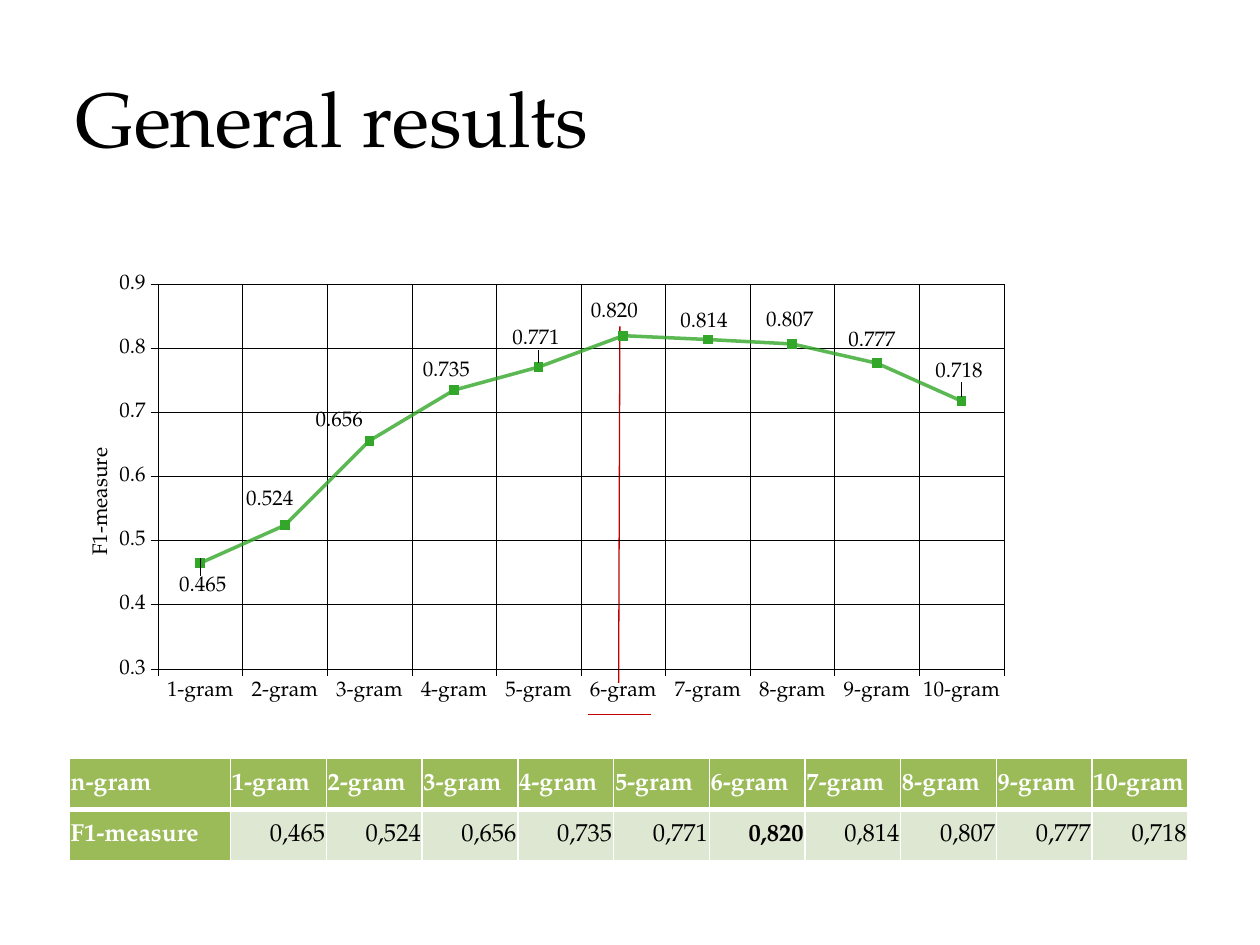
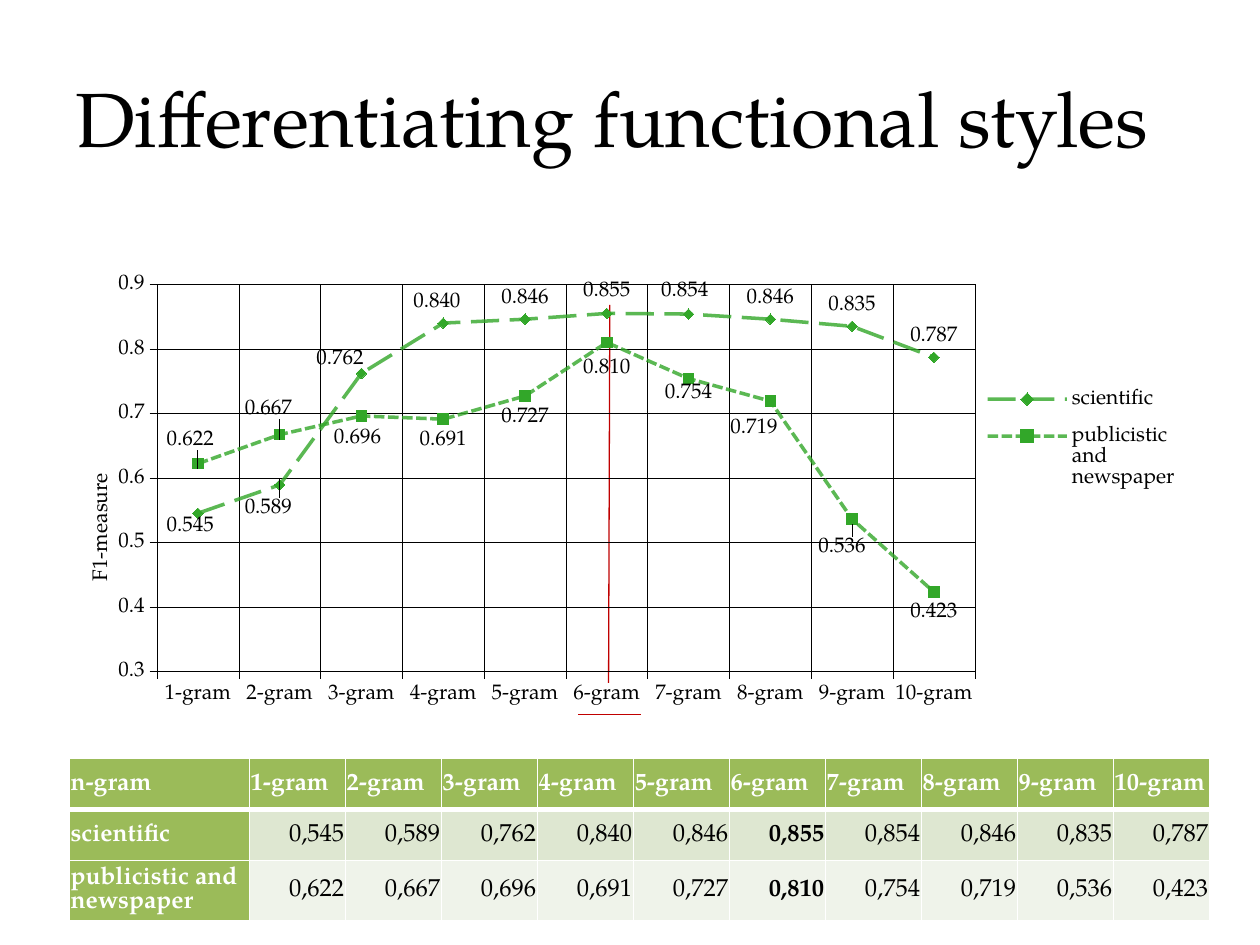
from lxml.etree import SubElement
from pptx import Presentation
from pptx.chart.data import CategoryChartData as ChartData
from pptx.dml.color import RGBColor
from pptx.enum.chart import XL_CHART_TYPE as Kind
from pptx.enum.chart import XL_LABEL_POSITION as Pos
from pptx.enum.chart import XL_LEGEND_POSITION as LegendPos
from pptx.enum.chart import XL_MARKER_STYLE as Mark
from pptx.enum.chart import XL_TICK_MARK as Tick
from pptx.enum.dml import MSO_LINE as Dash
from pptx.enum.shapes import MSO_CONNECTOR as Link
from pptx.enum.text import MSO_ANCHOR as Anchor
from pptx.enum.text import PP_ALIGN as Align
from pptx.oxml.ns import qn
from pptx.util import Inches, Pt

FONT = "TeX Gyre Pagella"
BLACK = RGBColor(0, 0, 0)
WHITE = RGBColor(255, 255, 255)
RED = RGBColor(0xC0, 0, 0)
GREEN = RGBColor(0x32, 0xA7, 0x29)
HEAD = RGBColor(0x9B, 0xBB, 0x59)
BANDS = [RGBColor(0xDE, 0xE7, 0xD1), RGBColor(0xEF, 0xF3, 0xEA)]

GRAMS = [f"{n}-gram" for n in range(1, 11)]
BEST = 6
CHART_W, CHART_H = 8.88, 4.03

OVERALL = [0.465, 0.524, 0.656, 0.735, 0.771, 0.82, 0.814, 0.807, 0.777, 0.718]
SCIENCE = [0.545, 0.589, 0.762, 0.84, 0.846, 0.855, 0.854, 0.846, 0.835, 0.787]
PRESS = [0.622, 0.667, 0.696, 0.691, 0.727, 0.81, 0.754, 0.719, 0.536, 0.423]

# Label shifts in inches from the usual place, by point
OVERALL_MOVES = {
    0: (0.02, 0.34), 1: (-0.12, -0.04), 2: (-0.24, 0), 3: (-0.06, 0.01),
    4: (-0.02, -0.06), 5: (-0.07, -0.03), 6: (-0.03, 0.02),
    7: (-0.02, -0.02), 8: (-0.04, -0.02), 9: (-0.02, -0.07)}
SCIENCE_MOVES = {
    0: (-0.06, 0.27), 1: (-0.09, 0.35), 2: (-0.17, 0.05),
    3: (-0.05, 0), 5: (0, -0.01), 6: (-0.03, -0.02)}
PRESS_MOVES = {
    0: (-0.06, -0.35), 1: (-0.09, -0.37), 2: (-0.03, 0.01), 5: (0, 0.04),
    6: (0, -0.05), 7: (-0.13, 0.05), 8: (-0.08, 0.06)}


def style(para, size, color=BLACK, bold=False):
    for run in para.runs:
        font = run.font
        font.name, font.size, font.bold = FONT, Pt(size), bold
        font.color.rgb = color


def add_title(slide, text):
    box = slide.shapes.add_textbox(Inches(0.5), Inches(0.3), Inches(9), Inches(1.25))
    frame = box.text_frame
    frame.word_wrap = True
    frame.vertical_anchor = Anchor.MIDDLE
    frame.text = text
    style(frame.paragraphs[0], 44)


def add_line(slide, x1, y1, x2, y2):
    ends = [Inches(v) for v in (x1, y1, x2, y2)]
    line = slide.shapes.add_connector(Link.STRAIGHT, *ends)
    line.line.color.rgb = RED
    line.line.width = Pt(0.75)
    SubElement(line.element.spPr, qn("a:effectLst"))


def mark_best(slide, x, top):
    """Draw a line down to the best n-gram and underline its name."""
    add_line(slide, x, top, x - 0.01, 5.42)
    add_line(slide, x - 0.25, 5.67, x + 0.25, 5.67)


def place(parent, index, edge=True, inner=False, **spots):
    """Give a chart part a manual layout, in fractions of the chart."""
    for old in parent.findall(qn("c:layout")):
        parent.remove(old)
    layout = SubElement(parent, qn("c:layout"))
    parent.insert(index, layout)
    manual = SubElement(layout, qn("c:manualLayout"))
    if inner:
        SubElement(manual, qn("c:layoutTarget"), val="inner")
    if edge:
        for mode in ("xMode", "yMode"):
            SubElement(manual, qn(f"c:{mode}"), val="edge")
    for name, value in spots.items():
        SubElement(manual, qn(f"c:{name}"), val=f"{value:.4f}")


def clear_back(chart):
    space = chart.element
    props = SubElement(space, qn("c:spPr"))
    SubElement(props, qn("a:noFill"))
    SubElement(SubElement(props, qn("a:ln")), qn("a:noFill"))
    space.find(qn("c:chart")).addnext(props)


def style_axis(axis):
    axis.has_major_gridlines = True
    axis.major_tick_mark = Tick.CROSS
    for part in (axis, axis.major_gridlines):
        part.format.line.color.rgb = BLACK
        part.format.line.width = Pt(0.25)


def style_values(axis, title_y):
    axis.minimum_scale, axis.maximum_scale, axis.major_unit = 0.3, 0.9, 0.1
    axis.tick_labels.number_format = "0.0"
    axis.tick_labels.number_format_is_linked = False
    axis.has_title = True
    title = axis.axis_title
    title.text_frame.text = "F1-measure"
    style(title.text_frame.paragraphs[0], 12)
    body = title.element.xpath(".//a:bodyPr")[0]
    body.set("rot", "-5400000")
    body.set("vert", "horz")
    place(title.element, 1, x=0.02, y=title_y)


def style_series(series, dash, mark, size, pos, moves):
    series.smooth = False
    line = series.format.line
    line.color.rgb, line.width, line.dash_style = GREEN, Pt(2), dash
    color = series.format.line.color and series._element.xpath("c:spPr/a:ln//a:srgbClr")[0]
    SubElement(color, qn("a:alpha"), val="80000")
    marker = series.marker
    marker.style, marker.size = mark, size
    marker.format.fill.solid()
    marker.format.fill.fore_color.rgb = GREEN
    marker.format.line.color.rgb = GREEN
    labels = series.data_labels
    labels.show_value = True
    labels.number_format = "#,##0.000"
    labels.number_format_is_linked = False
    labels.position = pos
    for point, (dx, dy) in moves.items():
        series.points[point].data_label.position = pos
        label = series._element.xpath(f"c:dLbls/c:dLbl[c:idx/@val='{point}']")[0]
        place(label, 1, edge=False, x=dx / CHART_W, y=dy / CHART_H)
        form = SubElement(label, qn("c:numFmt"), formatCode="#,##0.000", sourceLinked="0")
        label.insert(2, form)


def add_chart(slide, rows, looks, plot, title_y):
    data = ChartData()
    data.categories = GRAMS
    for name, values in rows:
        data.add_series(name, values)
    chart = slide.shapes.add_chart(
        Kind.LINE_MARKERS, Inches(0.5), Inches(1.75),
        Inches(CHART_W), Inches(CHART_H), data).chart
    chart.has_title = False
    chart.font.name, chart.font.size = FONT, Pt(12)
    chart.font.color.rgb = BLACK
    clear_back(chart)
    chart.plots[0].vary_by_categories = False
    area = chart.element.xpath("c:chart/c:plotArea")[0]
    place(area, 0, inner=True, **dict(zip("xywh", plot)))
    style_axis(chart.category_axis)
    style_axis(chart.value_axis)
    style_values(chart.value_axis, title_y)
    for series, look in zip(chart.plots[0].series, looks):
        style_series(series, *look)
    chart.has_legend = len(rows) > 1
    if chart.has_legend:
        legend = chart.legend
        legend.position = LegendPos.CORNER
        legend.include_in_layout = False
        place(legend._element, 1, x=0.82, y=0.3, w=0.18, h=0.26)


def add_borders(cell, bottom):
    props = cell._tc.get_or_add_tcPr()
    widths = {"lnL": 1, "lnR": 1, "lnT": 1, "lnB": bottom}
    for index, (side, width) in enumerate(widths.items()):
        line = SubElement(props, qn(f"a:{side}"), w=str(Pt(width)))
        fill = SubElement(line, qn("a:solidFill"))
        SubElement(fill, qn("a:srgbClr"), val=str(WHITE))
        props.insert(index, line)


def fill_cell(cell, text, back, color, bold, align=Align.LEFT, bottom=1):
    cell.text = text
    cell.vertical_anchor = Anchor.MIDDLE
    cell.margin_left = cell.margin_top = cell.margin_right = Inches(0.01)
    cell.margin_bottom = 0
    cell.fill.solid()
    cell.fill.fore_color.rgb = back
    para = cell.text_frame.paragraphs[0]
    para.alignment = align
    style(para, 14, color, bold)
    add_borders(cell, bottom)


def add_table(slide, rows, first, step):
    """Build the score table; first and step are column widths."""
    count = len(rows) + 1
    table = slide.shapes.add_table(
        count, len(GRAMS) + 1, Inches(0.55), Inches(6.02),
        Inches(first + step * len(GRAMS)), Inches(0.405 * count)).table
    for index, column in enumerate(table.columns):
        column.width = Inches(step if index else first)
    for index, text in enumerate(["n-gram"] + GRAMS):
        fill_cell(table.cell(0, index), text, HEAD, WHITE, True, bottom=3)
    for row, (name, values) in enumerate(rows, 1):
        fill_cell(table.cell(row, 0), name, HEAD, WHITE, True)
        for col, value in enumerate(values, 1):
            text = f"{value:.3f}".replace(".", ",")
            fill_cell(table.cell(row, col), text, BANDS[row - 1], BLACK,
                      col == BEST, Align.RIGHT)


def main():
    deck = Presentation()
    deck.slide_width, deck.slide_height = Inches(10), Inches(7.5)
    blank = deck.slide_layouts[6]

    slide = deck.slides.add_slide(blank)
    mark_best(slide, 4.92, 2.59)
    add_title(slide, "General results")
    add_table(slide, [("F1-measure", OVERALL)], 1.28, 0.76)
    add_chart(slide, [("Series 1", OVERALL)],
              [(Dash.SOLID, Mark.SQUARE, 5, Pos.ABOVE, OVERALL_MOVES)],
              (0.085, 0.126, 0.756, 0.757), 0.44)

    slide = deck.slides.add_slide(blank)
    styles = [("scientific", SCIENCE), ("publicistic and newspaper", PRESS)]
    mark_best(slide, 4.84, 2.42)
    add_title(slide, "Differentiating functional styles")
    add_table(slide, styles, 1.43, 0.762)
    add_chart(slide, styles,
              [(Dash.LONG_DASH, Mark.DIAMOND, 6, Pos.ABOVE, SCIENCE_MOVES),
               (Dash.SQUARE_DOT, Mark.SQUARE, 6, Pos.BELOW, PRESS_MOVES)],
              (0.084, 0.126, 0.731, 0.762), 0.49)

    deck.save("out.pptx")


if __name__ == "__main__":
    main()
